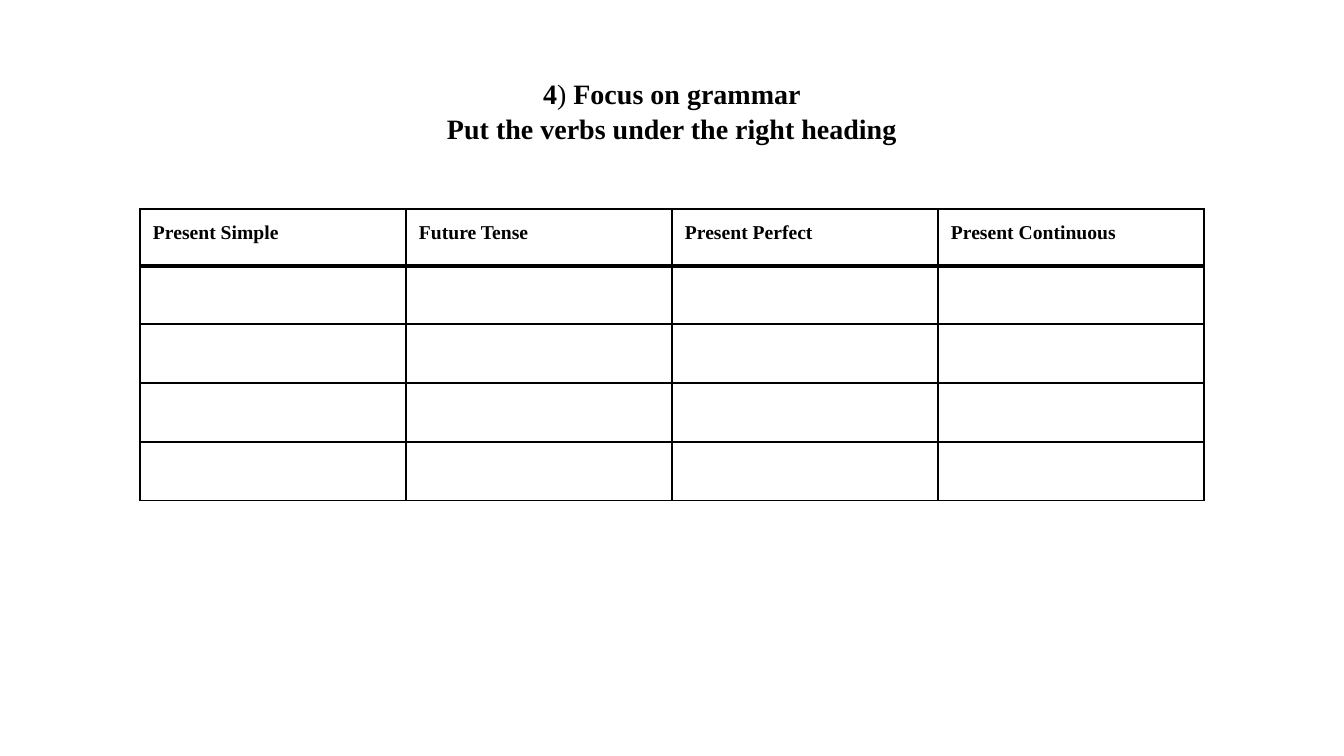
from dataclasses import dataclass

from lxml.etree import SubElement
from pptx import Presentation
from pptx.dml.color import RGBColor
from pptx.enum.text import MSO_ANCHOR, PP_ALIGN
from pptx.oxml.ns import qn
from pptx.slide import Slide
from pptx.table import _Cell
from pptx.text.text import _Paragraph
from pptx.util import Emu, Pt

EMU_PER_PX = 9072
COLORS = {"ink": "000000"}
BORDER_WIDTH = Pt(1)
INSET = 13
COLUMN_WIDTH = 266
TITLE_FORMAT = {"name": "Times New Roman", "size": Pt(20)}
HEADING_FORMAT = {"name": "Times New Roman", "size": Pt(14), "bold": True}
TITLE_LINES = (
    (("4", True), (") ", False), ("Focus on grammar", True)),
    (("Put the verbs under the right heading", True),),
)


@dataclass(frozen=True)
class Grid:
    left: int
    top: int
    row_height: int
    rows: tuple[tuple[str, ...], ...]


GRIDS = (
    Grid(140, 265, 59, (("",) * 4,) * 4),
    Grid(140, 209, 58, (("Present Simple", "Future Tense", "Present Perfect", "Present Continuous"),)),
)


def px(length: int) -> Emu:
    return Emu(length * EMU_PER_PX)


def add_run(paragraph: _Paragraph, text: str, font_format: dict) -> None:
    run = paragraph.add_run()
    run.text = text
    for name, value in font_format.items():
        setattr(run.font, name, value)
    run.font.color.rgb = RGBColor.from_string(COLORS["ink"])


def set_insets(target: object) -> None:
    for side in ("left", "top", "right", "bottom"):
        setattr(target, f"margin_{side}", px(INSET))


def add_title(slide: Slide) -> None:
    shape = slide.shapes.add_textbox(px(296), px(59), px(752), px(102))
    frame = shape.text_frame
    frame.word_wrap = True
    frame.vertical_anchor = MSO_ANCHOR.MIDDLE
    set_insets(frame)
    for index, line in enumerate(TITLE_LINES):
        paragraph = frame.add_paragraph() if index else frame.paragraphs[0]
        paragraph.alignment = PP_ALIGN.CENTER
        paragraph.line_spacing = 1.05
        for text, bold in line:
            add_run(paragraph, text, TITLE_FORMAT | {"bold": bold})


def add_borders(cell: _Cell) -> None:
    properties = cell._tc.get_or_add_tcPr()
    for side in ("L", "R", "T", "B"):
        border = SubElement(properties, qn(f"a:ln{side}"), w=str(BORDER_WIDTH))
        fill = SubElement(border, qn("a:solidFill"))
        SubElement(fill, qn("a:srgbClr"), val=COLORS["ink"])


def add_grid(slide: Slide, grid: Grid) -> None:
    row_count, column_count = len(grid.rows), len(grid.rows[0])
    shape = slide.shapes.add_table(
        row_count, column_count, px(grid.left), px(grid.top),
        px(column_count * COLUMN_WIDTH), px(row_count * grid.row_height),
    )
    table = shape.table
    table.first_row = False
    table.horz_banding = False
    for row_index, texts in enumerate(grid.rows):
        for column_index, text in enumerate(texts):
            cell = table.cell(row_index, column_index)
            add_borders(cell)
            cell.fill.background()
            set_insets(cell)
            if text:
                add_run(cell.text_frame.paragraphs[0], text, HEADING_FORMAT)


def main() -> None:
    presentation = Presentation()
    presentation.slide_width = px(1344)
    presentation.slide_height = px(756)
    slide = presentation.slides.add_slide(presentation.slide_layouts[6])
    add_title(slide)
    for grid in GRIDS:
        add_grid(slide, grid)
    presentation.save("out.pptx")


if __name__ == "__main__":
    main()
